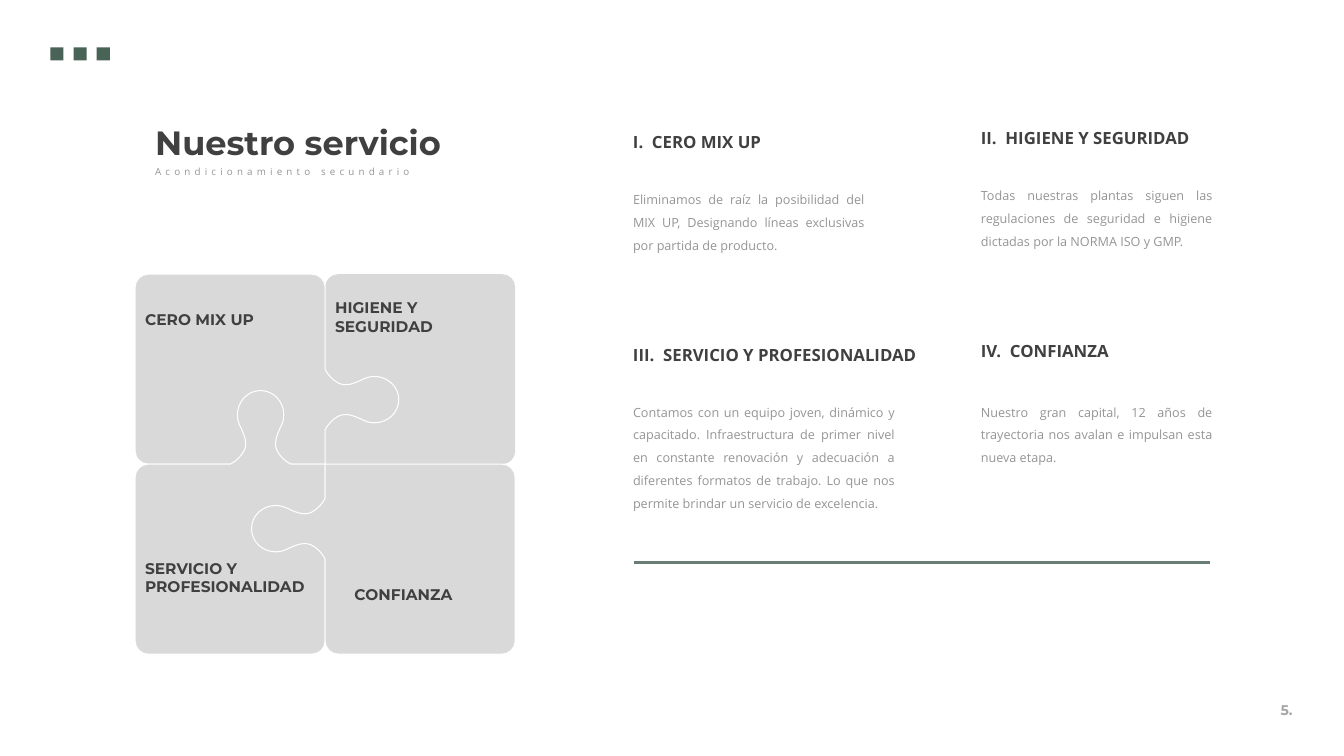
from dataclasses import dataclass

from lxml.etree import SubElement
from pptx import Presentation
from pptx.dml.color import RGBColor
from pptx.enum.shapes import MSO_CONNECTOR, MSO_SHAPE
from pptx.enum.text import MSO_ANCHOR, PP_ALIGN
from pptx.oxml.ns import qn
from pptx.util import Inches, Pt


@dataclass(frozen=True)
class Theme:
    display: str = "Montserrat"
    text: str = "Open Sans"
    dark: str = "404040"
    grey: str = "959595"
    pale: str = "A6A6A6"
    green: str = "496356"
    rule: str = "6A7E75"
    piece: str = "D9D9D9"
    white: str = "FFFFFF"
    title_size: int = 24
    heading_size: int = 12
    label_size: int = 11
    number_size: int = 10
    body_size: int = 9
    subtitle_size: int = 7


THEME = Theme()

SERVICES = [
    # left, top, body offset, body width, body height, heading, body
    (6.18, 1.16, 0.62, 2.49, 0.76, "I.  CERO MIX UP",
     "Eliminamos de raíz la posibilidad del MIX UP, Designando líneas "
     "exclusivas por partida de producto."),
    (9.63, 1.12, 0.62, 2.49, 0.76, "II.  HIGIENE Y SEGURIDAD",
     "Todas nuestras plantas siguen las regulaciones de seguridad e higiene "
     "dictadas por la NORMA ISO y GMP."),
    (6.18, 3.27, 0.62, 2.79, 1.24, "III.  SERVICIO Y PROFESIONALIDAD",
     "Contamos con un equipo joven, dinámico y capacitado. Infraestructura de "
     "primer nivel en constante renovación y adecuación a diferentes formatos "
     "de trabajo. Lo que nos permite brindar un servicio de excelencia."),
    (9.63, 3.23, 0.66, 2.49, 0.76, "IV.  CONFIANZA",
     "Nuestro gran capital, 12 años de trayectoria nos avalan e impulsan esta "
     "nueva etapa."),
]

PIECES = [
    # quarter turns, knob, label, label inset from left and top of the piece
    (3, False, "HIGIENE Y SEGURIDAD", 0.1, 0.24),
    (0, True, "CERO MIX UP", 0.1, 0.36),
    (1, True, "SERVICIO Y\nPROFESIONALIDAD", 0.1, 1.67),
    (2, True, "CONFIANZA", 1.02, 1.2),
]

# Half of a knob as Bézier curves: distance out from the edge, distance along it
KNOB_START = (0, -0.3)
KNOB_CURVES = [
    ((0.03, -0.24), (0.08, -0.19), (0.14, -0.16)),
    ((0.22, -0.13), (0.28, -0.16), (0.35, -0.19)),
    ((0.39, -0.21), (0.43, -0.23), (0.49, -0.23)),
    ((0.62, -0.23), (0.73, -0.13), (0.73, 0)),
]
KNOB_CENTRE = -0.64
CORNER_RADIUS = 0.13
ARC_HANDLE = 0.55


def color(value):
    return RGBColor.from_string(value)


def write(frame, text, *, font, size, ink, bold=False, align=PP_ALIGN.LEFT,
          spacing=None, tracking=None, wrap=True):
    frame.word_wrap = wrap
    frame.vertical_anchor = MSO_ANCHOR.TOP
    for index, line in enumerate(text.split("\n")):
        para = frame.paragraphs[0] if index == 0 else frame.add_paragraph()
        para.alignment = align
        if spacing:
            para.line_spacing = spacing
        span = para.add_run()
        span.text = line
        span.font.name = font
        span.font.size = Pt(size)
        span.font.bold = bold
        span.font.color.rgb = color(ink)
        if tracking:
            span._r.get_or_add_rPr().set("spc", str(tracking * 100))


def add_text(page, left, top, width, height, text, **style):
    box = page.shapes.add_textbox(Inches(left), Inches(top), Inches(width), Inches(height))
    write(box.text_frame, text, **style)


def add_squares(page, left, top, side=0.13, pitch=0.23):
    for index in range(3):
        square = page.shapes.add_shape(
            MSO_SHAPE.RECTANGLE, Inches(left + index * pitch), Inches(top),
            Inches(side), Inches(side))
        square.shadow.inherit = False
        square.fill.solid()
        square.fill.fore_color.rgb = color(THEME.green)
        square.line.fill.background()


def add_title(page, left, top):
    add_text(page, left, top, 3.55, 0.5, "Nuestro servicio", font=THEME.display,
             size=THEME.title_size, ink=THEME.dark, bold=True)
    add_text(page, left, top + 0.38, 3.28, 0.26, "Acondicionamiento secundario",
             font=THEME.text, size=THEME.subtitle_size, ink=THEME.grey,
             spacing=1.5, tracking=3)


def add_service(page, left, top, body_offset, width, height, heading, body):
    add_text(page, left, top, 3.06, 0.4, heading, font=THEME.text,
             size=THEME.heading_size, ink=THEME.dark, bold=True,
             align=PP_ALIGN.JUSTIFY, spacing=1.5)
    add_text(page, left, top + body_offset, width, height, body, font=THEME.text,
             size=THEME.body_size, ink=THEME.grey, align=PP_ALIGN.JUSTIFY, spacing=1.5)


def knob_segments():
    """A line to the knob, then its curves and their mirror image."""
    segments = [(KNOB_START,), *KNOB_CURVES]
    starts = [KNOB_START] + [curve[-1] for curve in KNOB_CURVES[:-1]]
    for start, (first, second, _) in zip(reversed(starts), reversed(KNOB_CURVES)):
        segments.append(tuple((out, -along) for out, along in (second, first, start)))
    return [tuple((out, KNOB_CENTRE + along) for out, along in segment)
            for segment in segments]


def corner_segments(corner, before, after):
    """A line to a rounded corner and its arc, given unit steps to both sides."""
    def move(step, share):
        return tuple(c + CORNER_RADIUS * share * s for c, s in zip(corner, step))
    handle = 1 - ARC_HANDLE
    return [(move(before, 1),), (move(before, handle), move(after, handle), move(after, 1))]


def piece_outline(side, turns, knob):
    """Upper left piece around the puzzle's centre, turned anticlockwise."""
    segments = [((0, 0),)]
    segments += corner_segments((-side, 0), (1, 0), (0, -1))
    segments += corner_segments((-side, -side), (0, 1), (1, 0))
    segments += corner_segments((0, -side), (-1, 0), (0, 1))
    if knob:
        segments += knob_segments()
    for _ in range(turns):
        segments = [tuple((y, -x) for x, y in segment) for segment in segments]
    return segments


def add_curved_outline(page, segments):
    """Each segment ends at its last point; a curve's two handles come first."""
    ends = [segment[-1] for segment in segments]
    builder = page.shapes.build_freeform(*ends[0], scale=1.0)
    builder.add_line_segments(ends[1:], close=True)
    outline = builder.convert_to_shape()
    lines = list(outline._element.iter(qn("a:lnTo")))
    for line, segment in zip(lines, segments[1:]):
        if len(segment) == 3:
            curve = line.makeelement(qn("a:cubicBezTo"))
            for x, y in segment:
                SubElement(curve, qn("a:pt"), x=str(x - outline.left), y=str(y - outline.top))
            line.getparent().replace(line, curve)
    return outline


def add_puzzle(page, left, top, size):
    side = size / 2
    for turns, knob, label, inset_left, inset_top in PIECES:
        segments = [tuple((Inches(left + side + x), Inches(top + side + y))
                          for x, y in segment)
                    for segment in piece_outline(side, turns, knob)]
        piece = add_curved_outline(page, segments)
        piece.shadow.inherit = False
        piece.fill.solid()
        piece.fill.fore_color.rgb = color(THEME.piece)
        if knob:
            piece.line.color.rgb = color(THEME.white)
            piece.line.width = Pt(0.75)
        else:
            piece.line.fill.background()
        frame = piece.text_frame
        frame.margin_left, frame.margin_top = Inches(inset_left), Inches(inset_top)
        write(frame, label, font=THEME.display, size=THEME.label_size,
              ink=THEME.dark, bold=True)


def add_rule(page, left, top, width):
    rule = page.shapes.add_connector(MSO_CONNECTOR.STRAIGHT, Inches(left), Inches(top),
                                     Inches(left + width), Inches(top))
    rule.line.color.rgb = color(THEME.rule)
    rule.line.width = Pt(1.5)
    SubElement(rule._element.spPr, qn("a:effectLst"))


def main():
    deck = Presentation()
    deck.slide_width, deck.slide_height = Inches(13.33), Inches(7.5)
    page = deck.slides.add_slide(deck.slide_layouts[6])
    add_text(page, 12.54, 6.91, 0.44, 0.27, "5.", font=THEME.display, size=THEME.number_size,
             ink=THEME.pale, bold=True, align=PP_ALIGN.CENTER, wrap=False)
    add_squares(page, 0.5, 0.47)
    for service in SERVICES:
        add_service(page, *service)
    add_rule(page, 6.29, 5.58, 5.71)
    add_title(page, 1.44, 1.16)
    add_puzzle(page, 1.34, 2.72, 3.77)
    deck.save("out.pptx")


if __name__ == "__main__":
    main()
